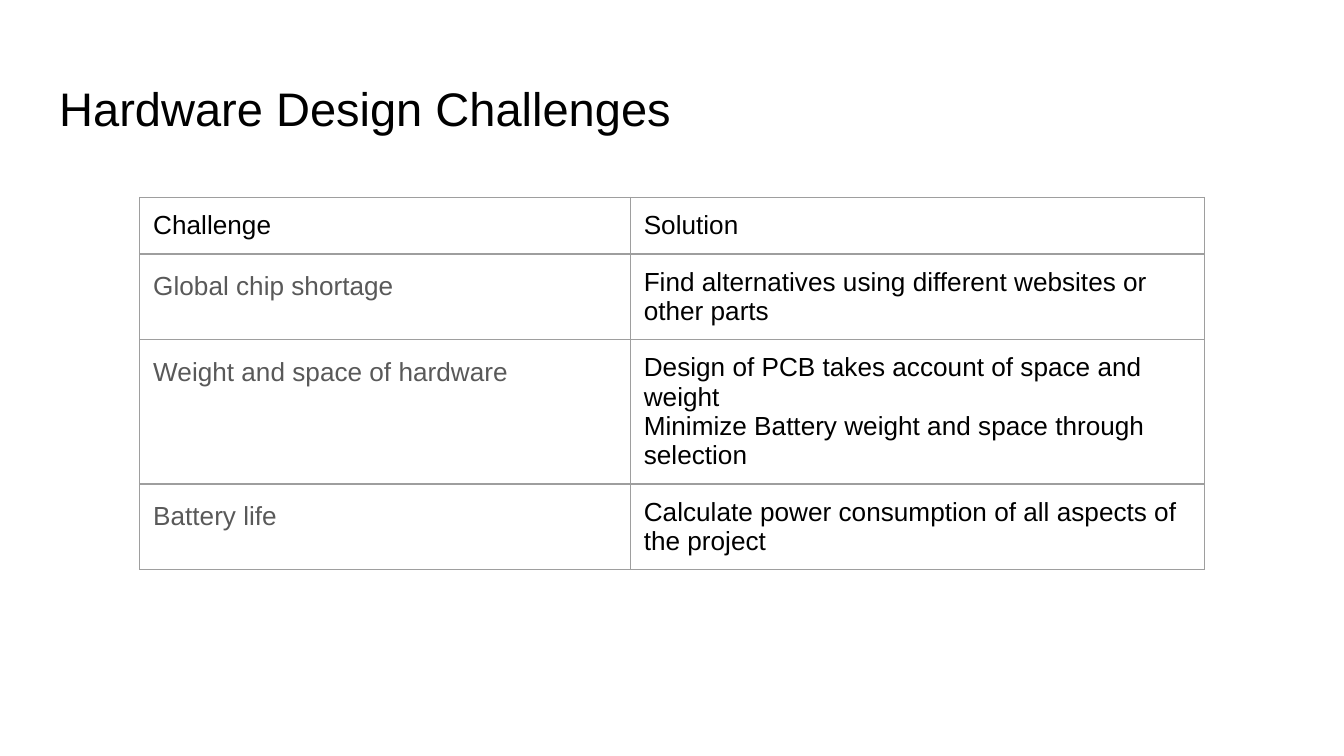
"""Build the hardware design challenges slide."""
from typing import NamedTuple

from lxml.etree import SubElement
from pptx import Presentation
from pptx.dml.color import RGBColor
from pptx.enum.text import MSO_ANCHOR as Anchor, PP_ALIGN as Align
from pptx.oxml.ns import qn
from pptx.util import Pt

COLORS = {"text": "000000", "muted": "595959", "border": "9E9E9E"}
FONT = "Arial"
INSET = Pt(7.2)
ROW_HEIGHT = 30.24
COLUMN_WIDTHS = (262.8, 307.44)


class Challenge(NamedTuple):
    name: str
    solutions: tuple[str, ...]


CHALLENGES = (
    Challenge("Global chip shortage",
              ("Find alternatives using different websites or other parts",)),
    Challenge("Weight and space of hardware",
              ("Design of PCB takes account of space and weight",
               "Minimize Battery weight and space through selection")),
    Challenge("Battery life",
              ("Calculate power consumption of all aspects of the project",)),
)


def write_text(text_frame, *lines: str, size: float = 14, color: str = "text",
               line_spacing: float = 1.0, space_after: float = 0) -> None:
    """Write each line as a formatted paragraph."""
    text_frame.word_wrap = True
    for index, line in enumerate(lines):
        paragraph = text_frame.add_paragraph() if index else text_frame.paragraphs[0]
        paragraph.alignment = Align.LEFT
        paragraph.line_spacing = line_spacing
        paragraph.space_before = Pt(0)
        paragraph.space_after = Pt(space_after)
        run = paragraph.add_run()
        run.text = line
        run.font.name = FONT
        run.font.size = Pt(size)
        run.font.color.rgb = RGBColor.from_string(COLORS[color])


def set_insets(target) -> None:
    """Give a cell or text frame equal insets."""
    target.margin_left = target.margin_right = INSET
    target.margin_top = target.margin_bottom = INSET


def style_cell(cell) -> None:
    """Clear the cell fill and outline all four sides."""
    set_insets(cell)
    cell.vertical_anchor = Anchor.TOP
    properties = cell._tc.get_or_add_tcPr()
    for side in ("lnL", "lnR", "lnT", "lnB"):
        line = SubElement(properties, qn(f"a:{side}"), w=str(Pt(0.75)))
        fill = SubElement(line, qn("a:solidFill"))
        SubElement(fill, qn("a:srgbClr"), val=COLORS["border"])
    cell.fill.background()


def add_title(slide, text: str) -> None:
    """Place and fill the title placeholder."""
    title = slide.shapes.title
    title.left, title.top = Pt(24.48), Pt(35.28)
    title.width, title.height = Pt(671.04), Pt(45.36)
    set_insets(title.text_frame)
    title.text_frame.vertical_anchor = Anchor.MIDDLE
    write_text(title.text_frame, text, size=25.2)


def add_challenge_table(slide, challenges: tuple[Challenge, ...]) -> None:
    """Add the table that pairs each challenge with its solutions."""
    row_count = len(challenges) + 1
    table = slide.shapes.add_table(
        row_count, len(COLUMN_WIDTHS), Pt(74.88), Pt(105.84),
        Pt(sum(COLUMN_WIDTHS)), Pt(ROW_HEIGHT * row_count)).table
    table.first_row = table.horz_banding = False
    for column, width in zip(table.columns, COLUMN_WIDTHS):
        column.width = Pt(width)
    for cell in table.iter_cells():
        style_cell(cell)
    for index, heading in enumerate(("Challenge", "Solution")):
        write_text(table.cell(0, index).text_frame, heading)
    for row, challenge in enumerate(challenges, start=1):
        write_text(table.cell(row, 0).text_frame, challenge.name,
                   color="muted", line_spacing=1.15, space_after=12)
        write_text(table.cell(row, 1).text_frame, *challenge.solutions)


def main() -> None:
    """Create and save the presentation."""
    presentation = Presentation()
    presentation.slide_width, presentation.slide_height = Pt(720), Pt(405)
    slide = presentation.slides.add_slide(presentation.slide_layouts[5])
    add_title(slide, "Hardware Design Challenges")
    add_challenge_table(slide, CHALLENGES)
    presentation.save("out.pptx")


if __name__ == "__main__":
    main()
